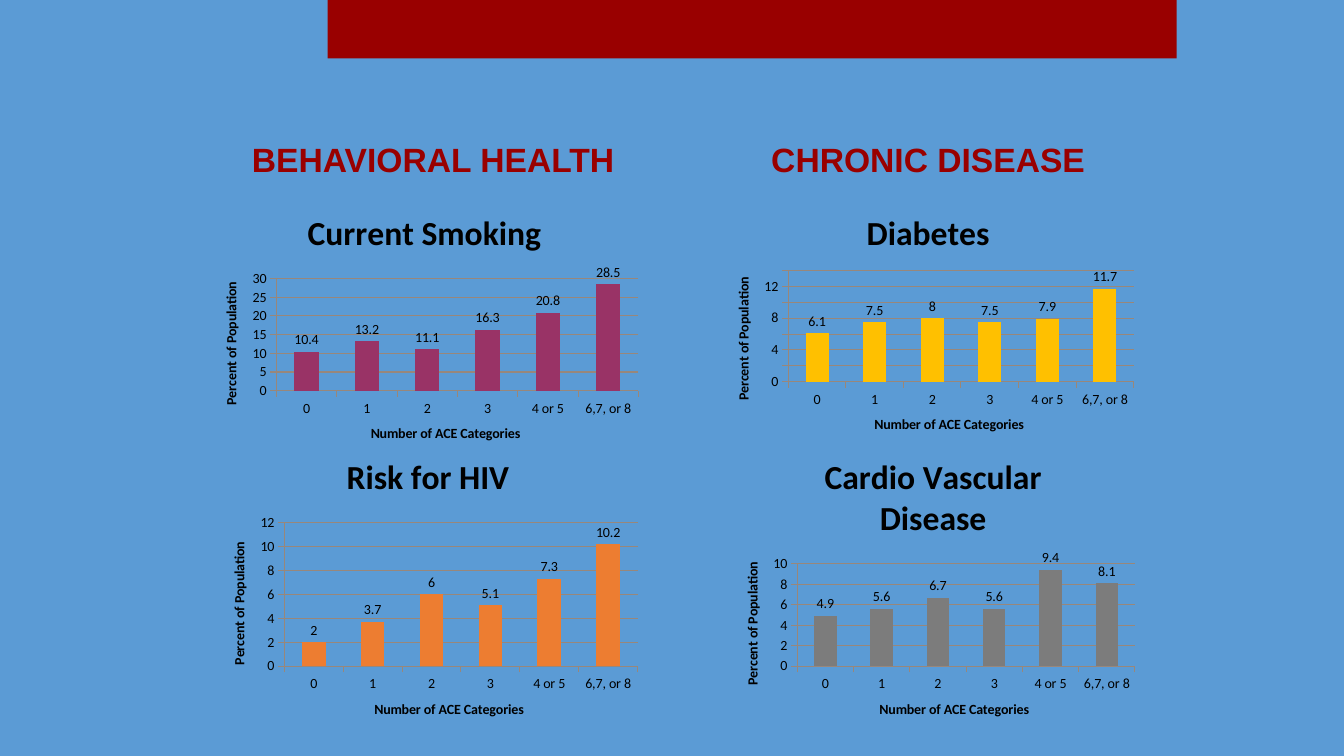
from dataclasses import dataclass

from pptx import Presentation
from pptx.chart.data import CategoryChartData
from pptx.dml.color import RGBColor
from pptx.enum import chart as ch, shapes, text
from pptx.util import Inches, Pt


@dataclass(frozen=True)
class Theme:
    background: str = "5B9BD5"
    accent: str = "990000"
    ink: str = "000000"
    grid: str = "98877B"
    heading_font: str = "Arial"
    chart_font: str = "Calibri"
    heading_size: int = 24
    label_size: int = 10


THEME = Theme()
CATEGORIES = ["0", "1", "2", "3", "4 or 5", "6,7, or 8"]

# left, heading
HEADINGS = [(2.17, "BEHAVIORAL HEALTH"), (7.08, "CHRONIC DISEASE")]

# title, box, bar colour, axis maximum, axis step, values
CHARTS = [
    ("Current Smoking", (2, 1.92, 4.42, 2.67), "993366", 30, 5,
     [10.4, 13.2, 11.1, 16.3, 20.8, 28.5]),
    ("Risk for HIV", (2.08, 4.33, 4.33, 3), "ED7D31", 12, 2,
     [2, 3.7, 6, 5.1, 7.3, 10.2]),
    ("Diabetes", (7.08, 1.92, 4.25, 2.58), "FFC000", 14, 2,
     [6.1, 7.5, 8, 7.5, 7.9, 11.7]),
    ("Cardio Vascular Disease", (7.17, 4.33, 4.17, 3), "7C7C7C", 10, 2,
     [4.9, 5.6, 6.7, 5.6, 9.4, 8.1]),
]


def rgb(color):
    return RGBColor.from_string(color)


def write(tf, words, *, size, font, color=THEME.ink, bold=True, align=None):
    """Put one formatted run in the first paragraph of a text frame."""
    p = tf.paragraphs[0]
    p.alignment = align
    r = p.add_run()
    r.text = words
    r.font.size = Pt(size)
    r.font.name = font
    r.font.bold = bold
    r.font.color.rgb = rgb(color)


def add_banner(s):
    sp = s.shapes.add_shape(shapes.MSO_SHAPE.RECTANGLE, Inches(3.25), 0,
                            Inches(8.42), Inches(0.58))
    sp.shadow.inherit = False
    sp.fill.solid()
    sp.fill.fore_color.rgb = rgb(THEME.accent)
    sp.line.fill.background()


def add_heading(s, left, words):
    sp = s.shapes.add_textbox(Inches(left), Inches(1.33), Inches(4.25), Inches(0.5))
    tf = sp.text_frame
    tf.word_wrap = True
    tf.auto_size = text.MSO_AUTO_SIZE.SHAPE_TO_FIT_TEXT
    write(tf, words, size=THEME.heading_size, font=THEME.heading_font,
          color=THEME.accent, align=text.PP_ALIGN.CENTER)


def format_axis(axis, title):
    write(axis.axis_title.text_frame, title, size=THEME.label_size,
          font=THEME.chart_font)
    axis.major_tick_mark = ch.XL_TICK_MARK.OUTSIDE
    axis.format.line.color.rgb = rgb(THEME.grid)
    axis.format.line.width = Pt(0.75)


def add_bar_chart(s, title, box, color, maximum, step, values):
    data = CategoryChartData()
    data.categories = CATEGORIES
    data.add_series(title, values)
    chart = s.shapes.add_chart(ch.XL_CHART_TYPE.COLUMN_CLUSTERED,
                               *map(Inches, box), data).chart
    chart.has_legend = False
    chart.font.name = THEME.chart_font
    chart.font.size = Pt(THEME.label_size)
    chart.font.color.rgb = rgb(THEME.ink)
    write(chart.chart_title.text_frame, title, size=THEME.heading_size,
          font=THEME.chart_font)
    chart.chart_title.include_in_layout = False

    format_axis(chart.category_axis, "Number of ACE Categories")
    axis = chart.value_axis
    format_axis(axis, "Percent of Population")
    axis.minimum_scale, axis.maximum_scale, axis.major_unit = 0, maximum, step
    axis.major_gridlines.format.line.color.rgb = rgb(THEME.grid)
    axis.major_gridlines.format.line.width = Pt(0.75)

    plot = chart.plots[0]
    plot.gap_width = 150
    plot.vary_by_categories = False
    bars = plot.series[0]
    bars.format.fill.solid()
    bars.format.fill.fore_color.rgb = rgb(color)
    labels = bars.data_labels
    labels.show_value = True
    labels.position = ch.XL_LABEL_POSITION.OUTSIDE_END


def main():
    prs = Presentation()
    prs.slide_width, prs.slide_height = Inches(13.33), Inches(7.5)
    s = prs.slides.add_slide(prs.slide_layouts[6])
    s.background.fill.solid()
    s.background.fill.fore_color.rgb = rgb(THEME.background)
    add_banner(s)
    for heading in HEADINGS:
        add_heading(s, *heading)
    for spec_row in CHARTS:
        add_bar_chart(s, *spec_row)
    prs.save("out.pptx")


if __name__ == "__main__":
    main()
